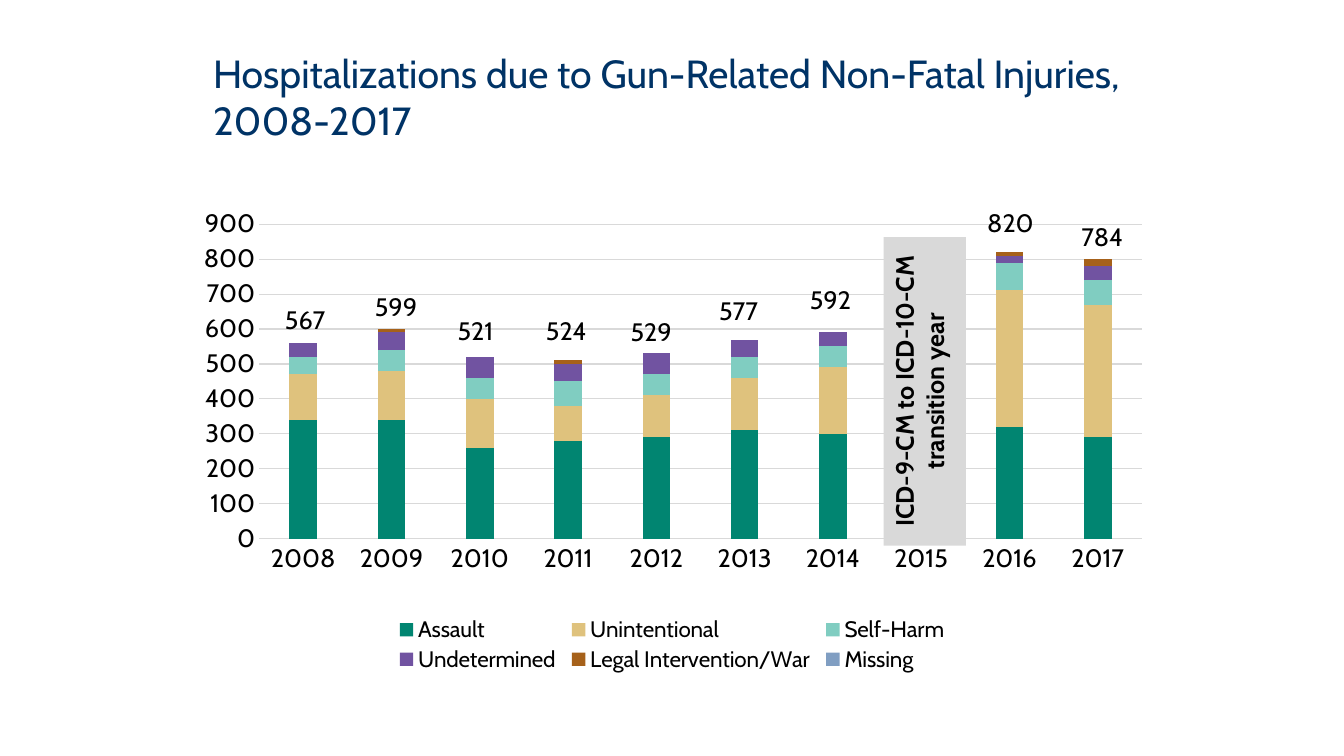
from dataclasses import dataclass

from lxml.etree import SubElement
from pptx import Presentation
from pptx.chart.data import CategoryChartData
from pptx.dml.color import RGBColor
from pptx.enum.chart import XL_CHART_TYPE as ChartType, XL_LEGEND_POSITION as LegendPosition
from pptx.enum.chart import XL_TICK_MARK as TickMark
from pptx.enum.shapes import MSO_SHAPE as Shape
from pptx.enum.text import MSO_ANCHOR as Anchor, MSO_AUTO_SIZE as AutoSize, PP_ALIGN as Align
from pptx.oxml.ns import qn
from pptx.util import Inches, Pt


@dataclass(frozen=True)
class Theme:
    """Colours, font and type sizes of the slide."""
    font: str = "Cabin"
    title: str = "003366"
    ink: str = "000000"
    rule: str = "D9D9D9"
    title_size: int = 28
    label_size: int = 18
    legend_size: int = 16
    chart_size: int = 10
    rule_width: float = 0.75


@dataclass(frozen=True)
class Box:
    """A rectangle in inches."""
    left: float
    top: float
    width: float
    height: float

    def portion(self, left, top, width, height):
        """Return the rectangle at the given shares of this one."""
        return Box(self.left + left * self.width, self.top + top * self.height,
                   width * self.width, height * self.height)

    def emu(self):
        """Return left, top, width and height as lengths."""
        return [Inches(side) for side in (self.left, self.top, self.width, self.height)]


THEME = Theme()
SLIDE = Box(0, 0, 13.33, 7.5)
TITLE = "Hospitalizations due to Gun-Related Non-Fatal Injuries, 2008-2017"
TRANSITION = "ICD-9-CM to ICD-10-CM transition year"
YEARS = [str(year) for year in range(2008, 2018)]
AXIS_MAX = 900
PLOT = (0.074, 0.045, 0.911, 0.659)
LEGEND = (0.21, 0.86, 0.58, 0.13)
INTENTS = {
    "Assault": ("018571", (340, 340, 260, 280, 290, 310, 300, None, 320, 290)),
    "Unintentional": ("DFC27D", (130, 140, 140, 100, 120, 150, 190, None, 390, 380)),
    "Self-Harm": ("80CDC1", (50, 60, 60, 70, 60, 60, 60, None, 80, 70)),
    "Undetermined": ("7153A1", (40, 50, 60, 50, 60, 50, 40, None, 20, 40)),
    "Legal Intervention/War": ("A6611A", (0, 10, 0, 10, 0, 0, 0, None, 10, 20)),
    "Missing": ("809EC2", (0, 0, 0, 0, 0, 0, 0, None, 0, 0)),
}
TOTALS = {
    "2008": ("567", 0.02, 685), "2009": ("599", 0.05, 722), "2010": ("521", -0.05, 653),
    "2011": ("524", -0.02, 653), "2012": ("529", -0.06, 650), "2013": ("577", -0.07, 711),
    "2014": ("592", -0.03, 742), "2016": ("820", 0.01, 961), "2017": ("784", 0.05, 921),
}


def style_font(font, size, color=THEME.ink, bold=None):
    """Set family, size, colour and weight of a font."""
    font.name, font.size, font.bold = THEME.font, Pt(size), bold
    font.color.rgb = RGBColor.from_string(color)


def write(frame, text, *, size=THEME.label_size, color=THEME.ink, bold=None,
          align=Align.CENTER, anchor=Anchor.TOP):
    """Put formatted text into a text frame."""
    frame.word_wrap = True
    frame.vertical_anchor = anchor
    paragraph = frame.paragraphs[0]
    paragraph.alignment = align
    run = paragraph.add_run()
    run.text = text
    style_font(run.font, size, color, bold)


def style_rule(line):
    """Draw a line as a thin grey rule."""
    line.color.rgb = RGBColor.from_string(THEME.rule)
    line.width = Pt(THEME.rule_width)


def set_layout(element, shares, inner=False):
    """Fix a region of the chart at shares of the chart's area."""
    layout = element.find(qn("c:layout"))
    if layout is None:
        layout = element.makeelement(qn("c:layout"))
        element.insert(0 if inner else 1, layout)
    manual = SubElement(layout, qn("c:manualLayout"))
    settings = [("layoutTarget", "inner")] if inner else []
    settings += [("xMode", "edge"), ("yMode", "edge"), *zip("xywh", shares)]
    for tag, value in settings:
        SubElement(manual, qn(f"c:{tag}")).set("val", str(value))


def add_title(slide, box):
    """Place the slide's title in its box."""
    title = slide.shapes.title
    title.left, title.top, title.width, title.height = box.emu()
    write(title.text_frame, TITLE, size=THEME.title_size, color=THEME.title,
          align=Align.LEFT, anchor=Anchor.MIDDLE)


def add_injury_chart(slide, box):
    """Place the stacked columns of injuries by intent."""
    injuries = CategoryChartData()
    injuries.categories = YEARS
    for intent, (_, counts) in INTENTS.items():
        injuries.add_series(intent, counts)
    chart = slide.shapes.add_chart(ChartType.COLUMN_STACKED, *box.emu(), injuries).chart
    chart.has_title = False
    style_font(chart.font, THEME.chart_size)
    columns = chart.plots[0]
    columns.gap_width, columns.overlap, columns.vary_by_categories = 219, 100, False
    for series, (color, _) in zip(columns.series, INTENTS.values()):
        series.format.fill.solid()
        series.format.fill.fore_color.rgb = RGBColor.from_string(color)
    years, counts = chart.category_axis, chart.value_axis
    for axis in (years, counts):
        axis.major_tick_mark = axis.minor_tick_mark = TickMark.NONE
        style_font(axis.tick_labels.font, THEME.label_size)
    style_rule(years.format.line)
    counts.format.line.fill.background()
    counts.minimum_scale, counts.maximum_scale, counts.major_unit = 0, AXIS_MAX, 100
    counts.has_major_gridlines = True
    style_rule(counts.major_gridlines.format.line)
    chart.has_legend = True
    legend = chart.legend
    legend.position, legend.include_in_layout = LegendPosition.BOTTOM, False
    style_font(legend.font, THEME.legend_size)
    chart_space = chart.element
    set_layout(chart_space.find(".//" + qn("c:plotArea")), PLOT, inner=True)
    set_layout(chart_space.find(".//" + qn("c:legend")), LEGEND)


def over_year(plot, year, nudge, count, width, height):
    """Return a box around a year's column, its top at a count on the axis."""
    column = 1 / len(YEARS)
    center = (YEARS.index(year) + 0.5 + nudge) * column
    return plot.portion(center - width * column / 2, 1 - count / AXIS_MAX,
                        width * column, height)


def add_totals(slide, plot):
    """Place the yearly totals above their columns."""
    for year, (total, nudge, count) in TOTALS.items():
        box = over_year(plot, year, nudge, count, 0.88, 0.13)
        frame = slide.shapes.add_textbox(*box.emu()).text_frame
        write(frame, total)
        frame.auto_size = AutoSize.SHAPE_TO_FIT_TEXT


def add_transition(slide, plot):
    """Place the upright band over the year without counts."""
    box = over_year(plot, "2015", 0.04, 863, 0.93, 0.98)
    band = slide.shapes.add_shape(Shape.RECTANGLE, *box.emu())
    band.shadow.inherit = False
    band.fill.solid()
    band.fill.fore_color.rgb = RGBColor.from_string(THEME.rule)
    band.line.fill.background()
    write(band.text_frame, TRANSITION, bold=True)
    band.text_frame.auto_size = AutoSize.SHAPE_TO_FIT_TEXT
    band.element.find(".//" + qn("a:bodyPr")).set("vert", "vert270")


def main():
    """Build the slide and save it."""
    deck = Presentation()
    deck.slide_width, deck.slide_height = Inches(SLIDE.width), Inches(SLIDE.height)
    slide = deck.slides.add_slide(deck.slide_layouts[5])
    chart_box = SLIDE.portion(0.1395, 0.268, 0.721, 0.632)
    plot = chart_box.portion(*PLOT)
    add_title(slide, SLIDE.portion(0.151, 0.065, 0.72, 0.125))
    add_injury_chart(slide, chart_box)
    add_totals(slide, plot)
    add_transition(slide, plot)
    deck.save("out.pptx")


if __name__ == "__main__":
    main()
